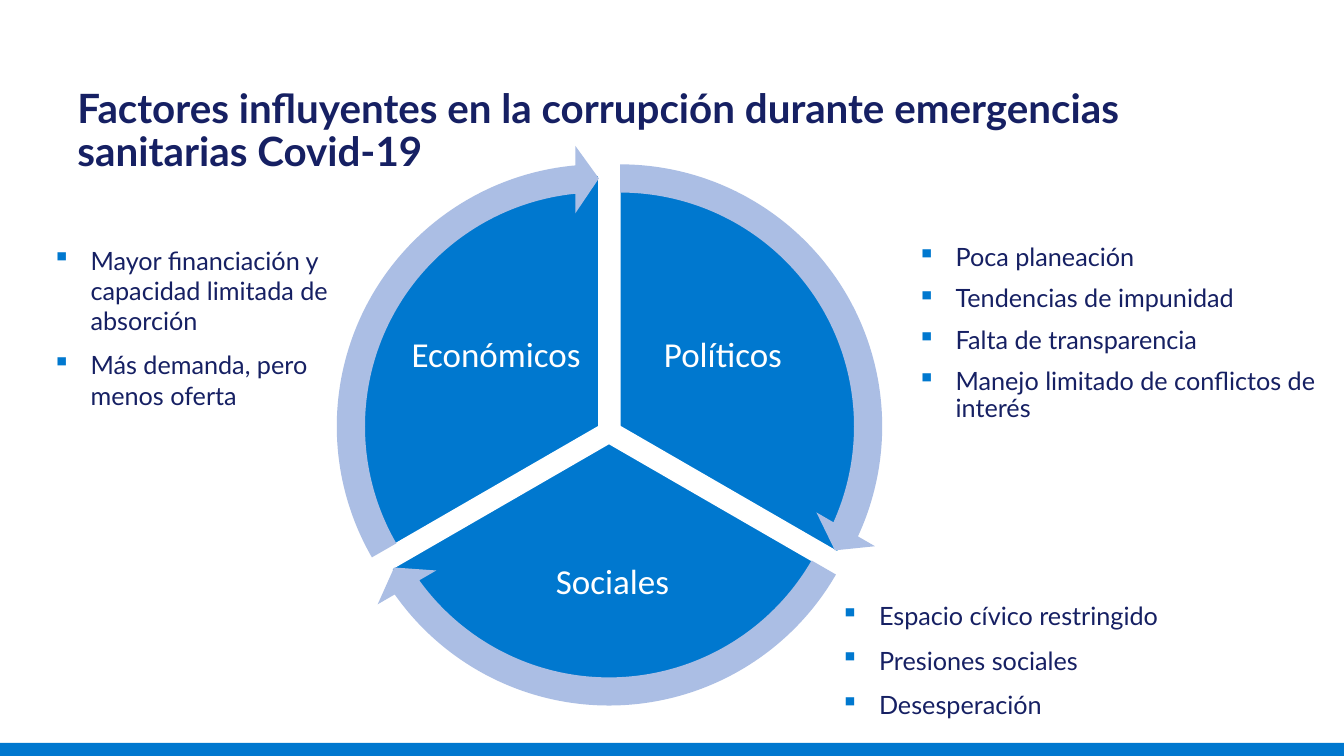
from dataclasses import dataclass

from lxml.etree import SubElement
from pptx import Presentation
from pptx.dml.color import RGBColor
from pptx.enum.shapes import MSO_SHAPE
from pptx.enum.text import MSO_ANCHOR, PP_ALIGN
from pptx.oxml.ns import qn
from pptx.util import Inches, Pt


@dataclass(frozen=True)
class Theme:
    blue: RGBColor = RGBColor(0x00, 0x78, 0xCF)
    pale_blue: RGBColor = RGBColor(0xAB, 0xBE, 0xE4)
    navy: RGBColor = RGBColor(0x16, 0x20, 0x63)
    white: RGBColor = RGBColor(0xFF, 0xFF, 0xFF)
    text_font: str = "Lato"
    label_font: str = "Calibri"
    title_size: float = 28.8
    bullet_size: float = 18
    label_size: float = 25


theme = Theme()
presentation = Presentation()
presentation.slide_width = Inches(13.33)
presentation.slide_height = Inches(7.5)
slide = presentation.slides.add_slide(presentation.slide_layouts[6])


def add_filled_shape(preset, left, top, width, height, color):
    shape = slide.shapes.add_shape(
        preset, Inches(left), Inches(top), Inches(width), Inches(height))
    shape.shadow.inherit = False
    shape.fill.solid()
    shape.fill.fore_color.rgb = color
    shape.line.fill.background()
    return shape


def add_text(left, top, width, height, text, font_name, size, color):
    """Add a wrapping text box; each line of text becomes a paragraph."""
    box = slide.shapes.add_textbox(
        Inches(left), Inches(top), Inches(width), Inches(height))
    text_frame = box.text_frame
    text_frame.word_wrap = True
    text_frame.text = text
    for paragraph in text_frame.paragraphs:
        for run in paragraph.runs:
            run.font.name = font_name
            run.font.size = Pt(size)
            run.font.color.rgb = color
    return text_frame


add_filled_shape(MSO_SHAPE.RECTANGLE, 0, 7.37, 13.33, 0.13, theme.blue)

title = add_text(
    0.67, 0.83, 12, 1.03,
    "Factores influyentes en la corrupción durante emergencias sanitarias Covid-19",
    theme.text_font, theme.title_size, theme.navy).paragraphs[0]
title.line_spacing = 0.9
title.runs[0].font.bold = True

# Cycle: angles are in units of 100000/60000 degrees, clockwise from the right
pie_size = 4.98
arrow_size = 5.59
arrow_margin = (arrow_size - pie_size) / 2
arrow_head_angle = 3.28
sectors = [
    # label, pie left and top, start and end angle, label box
    ("Políticos", 3.66, 1.74, 162, 18, (6.28, 2.79, 1.78, 1.48)),
    ("Sociales", 3.55, 1.91, 18, 90, (4.74, 5.14, 2.67, 1.3)),
    ("Económicos", 3.45, 1.74, 90, 162, (4.03, 2.79, 1.78, 1.48)),
]
for label, left, top, start, end, label_box in sectors:
    pie = add_filled_shape(MSO_SHAPE.PIE, left, top, pie_size, pie_size, theme.blue)
    pie.adjustments[0] = start
    pie.adjustments[1] = end
    pie.line.color.rgb = theme.white
    pie.line.width = Pt(1)

    text_frame = add_text(
        *label_box, label, theme.label_font, theme.label_size, theme.white)
    text_frame.vertical_anchor = MSO_ANCHOR.MIDDLE
    text_frame.margin_left = text_frame.margin_right = Inches(0.03)
    text_frame.margin_top = text_frame.margin_bottom = Inches(0.03)
    text_frame.paragraphs[0].alignment = PP_ALIGN.CENTER
    text_frame.paragraphs[0].line_spacing = 0.9

for label, left, top, start, end, label_box in sectors:
    arrow = add_filled_shape(
        MSO_SHAPE.CIRCULAR_ARROW, left - arrow_margin, top - arrow_margin,
        arrow_size, arrow_size, theme.pale_blue)
    adjustments = (0.05, arrow_head_angle, end - arrow_head_angle, start, 0.06)
    for index, value in enumerate(adjustments):
        arrow.adjustments[index] = value

bullet_lists = [
    # left, top, width, line spacing, items
    (0.42, 2.38, 3.25, 1.0, [
        "Mayor financiación y capacidad limitada de absorción",
        "Más demanda, pero menos oferta",
    ]),
    (9, 2.38, 4.5, 0.9, [
        "Poca planeación",
        "Tendencias de impunidad",
        "Falta de transparencia",
        "Manejo limitado de conflictos de interés",
    ]),
    (8.24, 5.91, 4.5, 1.0, [
        "Espacio cívico restringido",
        "Presiones sociales",
        "Desesperación",
    ]),
]
for left, top, width, line_spacing, items in bullet_lists:
    text_frame = add_text(
        left, top, width, 1.88, "\n".join(items),
        theme.text_font, theme.bullet_size, theme.navy)
    for index, paragraph in enumerate(text_frame.paragraphs):
        paragraph.line_spacing = line_spacing
        paragraph.space_before = Pt(10 if index else 0)
        properties = paragraph._p.get_or_add_pPr()
        properties.set("marL", str(Inches(0.38)))
        properties.set("indent", str(-Inches(0.38)))
        bullet_color = SubElement(properties, qn("a:buClr"))
        SubElement(bullet_color, qn("a:srgbClr"), val=str(theme.blue))
        SubElement(properties, qn("a:buChar"), char="▪")

presentation.save("out.pptx")
